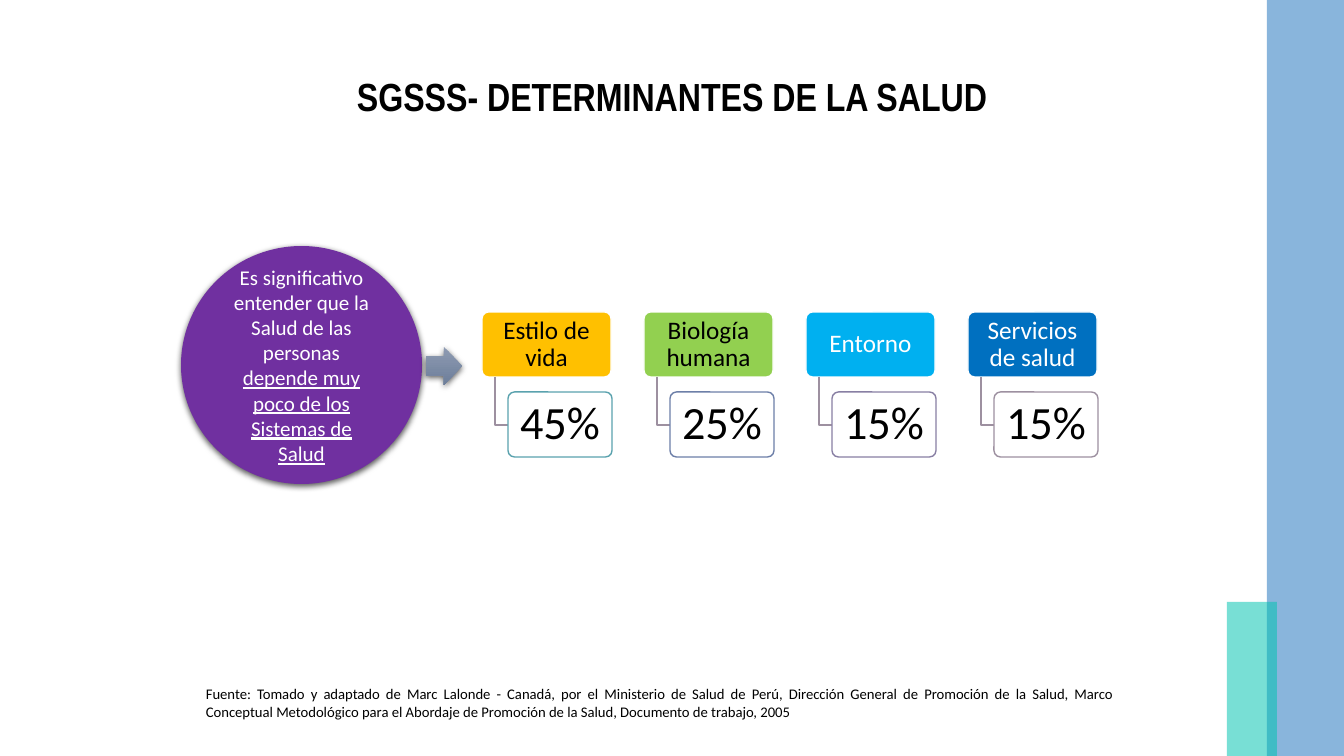
from lxml.etree import SubElement
from pptx import Presentation
from pptx.dml.color import RGBColor
from pptx.enum.shapes import MSO_SHAPE as SHAPE
from pptx.enum.text import MSO_ANCHOR as ANCHOR, PP_ALIGN as ALIGN
from pptx.oxml.ns import qn
from pptx.util import Pt

EMU_PER_PX = 914400 / 100.8
DETERMINANTS = [
    ("Estilo de vida", "45%", "FFC000", "000000", "5AA2AE"),
    ("Biología humana", "25%", "92D050", "000000", "6D7FA8"),
    ("Entorno", "15%", "00B0F0", "FFFFFF", "887FA3"),
    ("Servicios de salud", "15%", "0070C0", "FFFFFF", "9D90A0"),
]
FIRST_LEFT, COLUMN_PITCH = 482, 162
HEADER_TOP, VALUE_TOP, BOX_HEIGHT = 312, 392, 65
SOURCE = (
    "Fuente: Tomado y adaptado de Marc Lalonde - Canadá, por el Ministerio de Salud de Perú, "
    "Dirección General de Promoción de la Salud, Marco Conceptual Metodológico para el "
    "Abordaje de Promoción de la Salud, Documento de trabajo, 2005"
)


def px(*lengths):
    """Turn pixel lengths into EMU."""
    return [round(length * EMU_PER_PX) for length in lengths]


def color(hex_string):
    """Turn a hex string into a colour."""
    return RGBColor.from_string(hex_string)


def set_outline(shape, line):
    """Draw a one-point outline, or none."""
    if line:
        shape.line.color.rgb = color(line)
        shape.line.width = Pt(1)
    else:
        shape.line.fill.background()


def add_shape(slide, kind, box, fill, line=None, opacity=100):
    """Add a flat preset shape."""
    shape = slide.shapes.add_shape(kind, *px(*box))
    shape.shadow.inherit = False
    shape.fill.solid()
    shape.fill.fore_color.rgb = color(fill)
    if opacity < 100:
        fill_color = shape.fill._xPr.find(qn("a:solidFill"))[0]
        SubElement(fill_color, qn("a:alpha"), val=str(opacity * 1000))
    set_outline(shape, line)
    return shape


def add_shadow(shape):
    """Give the shape a soft shadow below it."""
    effects = shape._element.spPr.find(qn("a:effectLst"))
    shadow = SubElement(effects, qn("a:outerShdw"), blurRad=str(Pt(4.5)),
                        dist=str(Pt(1.5)), dir="5400000", rotWithShape="0")
    black = SubElement(shadow, qn("a:srgbClr"), val="000000")
    SubElement(black, qn("a:alpha"), val="63000")


def write_text(shape, text, size, text_color="000000", font="Calibri",
               align=ALIGN.CENTER, anchor=ANCHOR.MIDDLE):
    """Write one wrapped paragraph and return it."""
    frame = shape.text_frame
    frame.word_wrap = True
    frame.vertical_anchor = anchor
    paragraph = frame.paragraphs[0]
    paragraph.add_run().text = text
    paragraph.alignment = align
    paragraph.font.size = Pt(size)
    paragraph.font.name = font
    paragraph.font.color.rgb = color(text_color)
    return paragraph


def add_card(slide, box, text, size, text_color, fill, line, inset, opacity=100):
    """Add a rounded box with centred text."""
    card = add_shape(slide, SHAPE.ROUNDED_RECTANGLE, box, fill, line, opacity)
    card.adjustments[0] = 0.1
    frame = card.text_frame
    frame.margin_left, frame.margin_right = px(inset, inset)
    frame.margin_top, frame.margin_bottom = px(5, 5)
    write_text(card, text, size, text_color).line_spacing = 0.9


def add_elbow(slide, left, top, width, height):
    """Add the bent line from a header to its value."""
    builder = slide.shapes.build_freeform(left, top, scale=EMU_PER_PX)
    builder.add_line_segments([(left, top + height), (left + width, top + height)], close=False)
    elbow = builder.convert_to_shape()
    elbow.shadow.inherit = False
    elbow.fill.background()
    set_outline(elbow, "9D90A0")


def add_determinant(slide, left, name, share, fill, text_color, line):
    """Add a determinant with its share below."""
    add_card(slide, (left, HEADER_TOP, 129, BOX_HEIGHT), name, 18, text_color, fill, "FFFFFF", 6)
    add_elbow(slide, left + 13, HEADER_TOP + BOX_HEIGHT, 13, 48)
    add_card(slide, (left + 26, VALUE_TOP, 104, BOX_HEIGHT), share, 33, "000000",
             "FFFFFF", line, 9, opacity=90)


def add_message(slide):
    """Add the purple circle and its arrow."""
    circle = add_shape(slide, SHAPE.OVAL, (181, 246, 241, 238), "7030A0")
    add_shadow(circle)
    paragraph = write_text(
        circle, "Es significativo entender que la Salud de las personas ", 15, "FFFFFF")
    emphasis = paragraph.add_run()
    emphasis.text = "depende muy poco de los Sistemas de Salud"
    emphasis.font.underline = True

    arrow = add_shape(slide, SHAPE.RIGHT_ARROW, (426, 347, 36, 38), "7D8EAB")
    arrow.fill.gradient()
    arrow.fill.gradient_angle = 270
    for stop, shade in zip(arrow.fill.gradient_stops, ("8E9BB2", "6D7E9A")):
        stop.color.rgb = color(shade)
    add_shadow(arrow)


def main():
    """Build and save the slide."""
    presentation = Presentation()
    presentation.slide_width, presentation.slide_height = px(1344, 756)
    slide = presentation.slides.add_slide(presentation.slide_layouts[6])

    add_shape(slide, SHAPE.RECTANGLE, (1267, 0, 77, 756), "629DD1", opacity=75)
    add_shape(slide, SHAPE.RECTANGLE, (1227, 602, 50, 154), "00C3B1", opacity=53)

    title = slide.shapes.add_textbox(*px(268, 76, 808, 40))
    heading = write_text(title, "SGSSS- DETERMINANTES DE LA SALUD", 28, font="Arial Narrow")
    heading.font.bold = True
    source = slide.shapes.add_textbox(*px(196, 680, 928, 45))
    write_text(source, SOURCE, 10.5, align=ALIGN.JUSTIFY, anchor=ANCHOR.TOP)

    for column, determinant in enumerate(DETERMINANTS):
        add_determinant(slide, FIRST_LEFT + column * COLUMN_PITCH, *determinant)
    add_message(slide)

    presentation.save("out.pptx")


if __name__ == "__main__":
    main()
